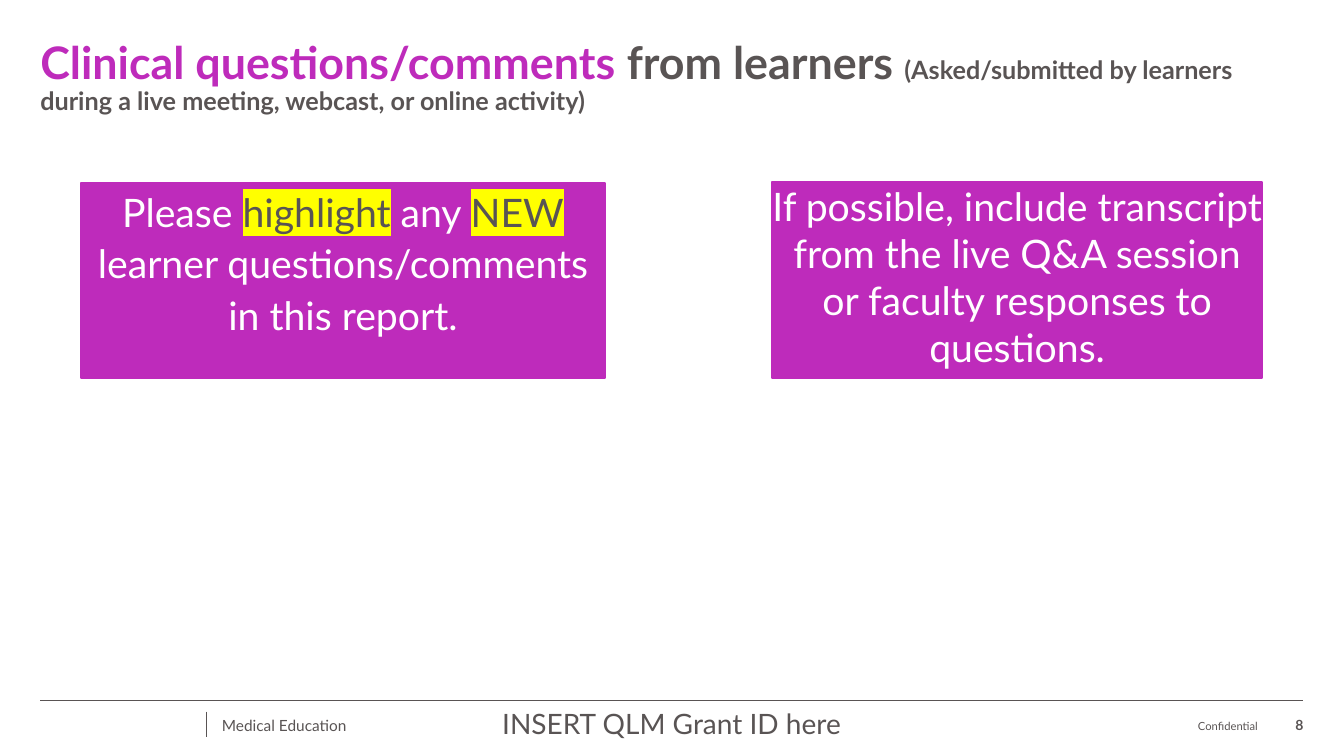
from lxml.etree import SubElement
from pptx import Presentation
from pptx.dml.color import RGBColor
from pptx.enum.shapes import MSO_CONNECTOR, MSO_SHAPE
from pptx.enum.text import MSO_ANCHOR, PP_ALIGN
from pptx.oxml.ns import qn
from pptx.util import Pt

PURPLE = RGBColor(0xBE, 0x2B, 0xBB)
GRAY = RGBColor(0x59, 0x54, 0x54)
WHITE = RGBColor(0xFF, 0xFF, 0xFF)
YELLOW = RGBColor(0xFF, 0xFF, 0x00)
FONT = "Lato"


def add_rule(page, x1, y1, x2, y2):
    rule = page.shapes.add_connector(
        MSO_CONNECTOR.STRAIGHT, Pt(x1), Pt(y1), Pt(x2), Pt(y2))
    rule.line.color.rgb = GRAY
    rule.line.width = Pt(0.5)
    SubElement(rule._element.spPr, qn("a:effectLst"))


def highlight(span, color):
    mark = SubElement(span._r.get_or_add_rPr(), qn("a:highlight"))
    SubElement(mark, qn("a:srgbClr")).set("val", str(color))


def write(box, text, size, color=GRAY, bold=False, align=PP_ALIGN.LEFT,
          anchor=MSO_ANCHOR.TOP, wrap=True):
    frame = box.text_frame
    frame.margin_left = frame.margin_right = 0
    frame.margin_top = frame.margin_bottom = 0
    frame.word_wrap = wrap
    frame.vertical_anchor = anchor
    para = frame.paragraphs[0]
    para.alignment = align
    para.font.name = FONT
    para.font.size = Pt(size)
    para.font.bold = bold
    para.font.color.rgb = color
    if text:
        para.add_run().text = text
    return para


def add_text(page, left, top, width, height, text, size, **style):
    box = page.shapes.add_textbox(Pt(left), Pt(top), Pt(width), Pt(height))
    return write(box, text, size, **style)


def add_callout(page, left, top, width, height, text=""):
    box = page.shapes.add_shape(
        MSO_SHAPE.RECTANGLE, Pt(left), Pt(top), Pt(width), Pt(height))
    box.shadow.inherit = False
    box.fill.solid()
    box.fill.fore_color.rgb = PURPLE
    box.line.color.rgb = PURPLE
    box.line.width = Pt(1.5)
    return write(box, text, 28, color=WHITE, align=PP_ALIGN.CENTER)


def add_span(para, text, color, size=None):
    span = para.add_run()
    span.text = text
    span.font.color.rgb = color
    if size:
        span.font.size = Pt(size)
    return span


def add_title(page):
    title = add_text(page, 28.8, 28.8, 902, 72, "", 32, bold=True)
    title.line_spacing = 0.9
    add_span(title, "Clinical questions/comments ", PURPLE)
    add_span(title, "from learners ", GRAY)
    add_span(title, "(Asked/submitted by learners during a live meeting, "
             "webcast, or online activity)", GRAY, 18)


def add_highlight_request(page):
    request = add_callout(page, 58, 131, 374, 139)
    request.line_spacing = 1.1
    for text, marked in (
            ("Please ", False), ("highlight", True), (" any ", False),
            ("NEW", True), (" learner questions/comments in this report.", False)):
        span = add_span(request, text, GRAY if marked else WHITE)
        if marked:
            highlight(span, YELLOW)


def add_footer(page):
    add_rule(page, 28.8, 500.4, 931, 500.4)
    add_rule(page, 147.6, 508.3, 147.6, 526.3)
    add_text(page, 158.4, 509, 298, 18, "Medical Education", 11,
             anchor=MSO_ANCHOR.MIDDLE, wrap=False)
    add_text(page, 290, 504.7, 379.5, 25, "INSERT QLM Grant ID here", 20,
             align=PP_ALIGN.CENTER)
    add_text(page, 645.8, 506, 252.8, 17.3, "Confidential", 8,
             align=PP_ALIGN.RIGHT, anchor=MSO_ANCHOR.BOTTOM)
    add_text(page, 905.8, 506, 25.2, 18, "8", 10, bold=True,
             align=PP_ALIGN.RIGHT, anchor=MSO_ANCHOR.BOTTOM, wrap=False)


def main():
    deck = Presentation()
    deck.slide_width = Pt(960)
    deck.slide_height = Pt(540)
    page = deck.slides.add_slide(deck.slide_layouts[6])
    add_title(page)
    add_highlight_request(page)
    add_callout(page, 551.5, 130.3, 350, 139.7,
                "If possible, include transcript from the live Q&A session "
                "or faculty responses to questions.")
    add_footer(page)
    deck.save("out.pptx")


if __name__ == "__main__":
    main()
